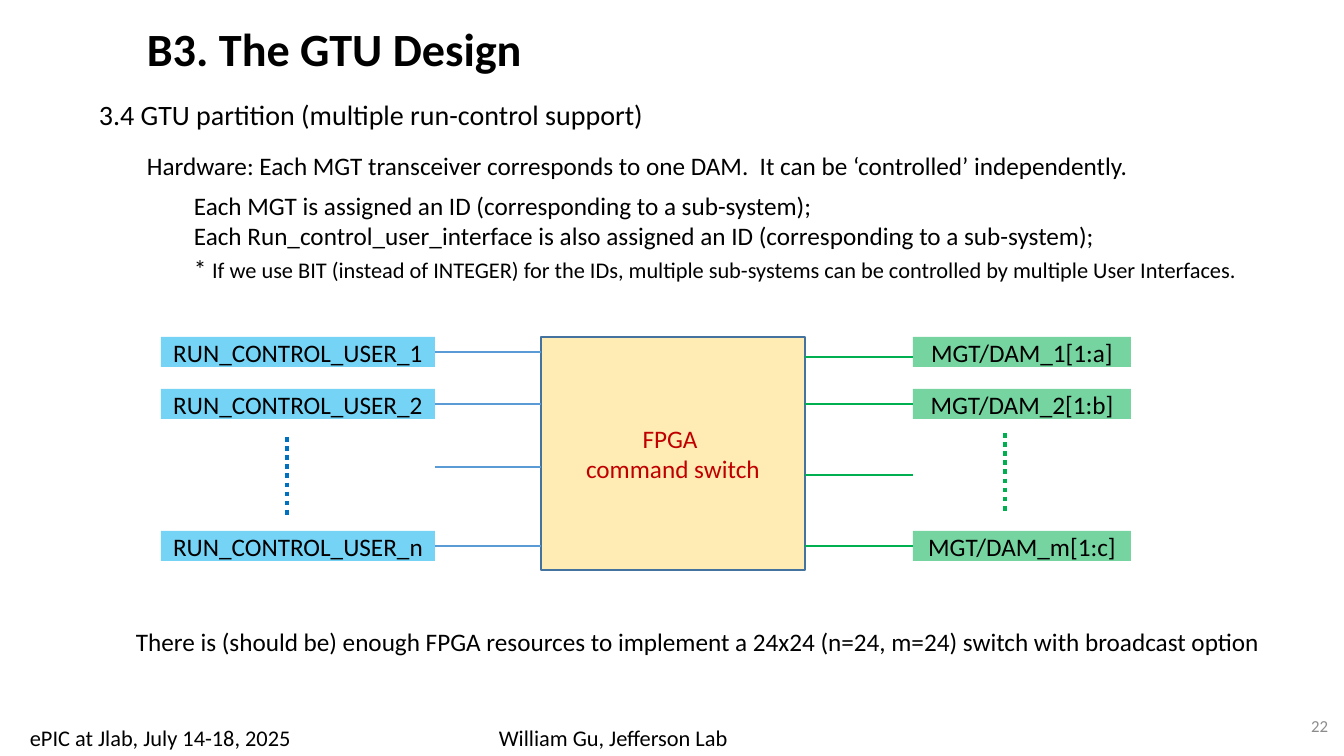
from lxml.etree import SubElement
from pptx import Presentation
from pptx.dml.color import RGBColor
from pptx.enum.dml import MSO_LINE
from pptx.enum.shapes import MSO_CONNECTOR, MSO_SHAPE
from pptx.enum.text import MSO_ANCHOR, PP_ALIGN
from pptx.oxml.ns import qn
from pptx.util import Pt

# Texts: (left, top, width, height), paragraphs of (wording, style) runs, layout
TEXTS = [
    ((20, 719, 284, 37), [[("ePIC at Jlab, July 14-18, 2025", "small")]], {}),
    ((489, 719, 252, 37), [[("William Gu, Jefferson Lab", "small")]], {}),
    ((137, 31, 407, 53), [[("B3. The GTU Design", "title")]], {"line_spacing": 0.7}),
    ((89, 93, 616, 44),
     [[("3.4 GTU partition (multiple run-control support)", "heading")]], {}),
    ((1036, 706, 302, 40), [[("22", "number")]], {"alignment": PP_ALIGN.RIGHT}),
    ((137, 145, 1008, 40),
     [[("Hardware: Each MGT transceiver corresponds to one DAM.  "
        "It can be ‘controlled’ independently.", "body")]], {}),
    ((184, 185, 931, 72),
     [[("Each MGT is assigned an ID (corresponding to a sub-system);", "body")],
      [("Each Run_control_user_interface is also assigned an ID "
        "(corresponding to a sub-system);", "body")]], {}),
    ((184, 248, 1083, 40),
     [[("* ", "body"),
       ("If we use BIT (instead of INTEGER) for the IDs, multiple sub-systems "
        "can be controlled by multiple User Interfaces.", "small")]], {}),
    ((126, 621, 1158, 40),
     [[("There is (should be) enough FPGA resources to implement a 24x24 "
        "(n=24, m=24) switch with broadcast option", "body")]], {}),
]
SWITCH_LINES = ["FPGA ", "command switch"]
USERS = ["RUN_CONTROL_USER_1", "RUN_CONTROL_USER_2", "RUN_CONTROL_USER_n"]
MODULES = ["MGT/DAM_1[1:a]", "MGT/DAM_2[1:b]", "MGT/DAM_m[1:c]"]

THEME = {
    "font": "Calibri",
    "styles": {
        "title": {"size": 33, "color": "000000", "bold": True},
        "heading": {"size": 20, "color": "000000"},
        "body": {"size": 18, "color": "000000"},
        "small": {"size": 16, "color": "000000"},
        "number": {"size": 12, "color": "8C8C8C"},
        "switch": {"size": 18, "color": "C00000"},
    },
    "user": {"fill": "00B0F0", "alpha": 54, "line": "5B9BD5", "dots": "0070C0"},
    "module": {"fill": "00B050", "alpha": 54, "line": "00B050", "dots": "00B050"},
    "switch": {"fill": "FFC000", "alpha": 29, "line": "43739E"},
}

# Diagram geometry in px
ROW_TOPS = [337, 389, 531]
ROW_HEIGHT = 30
USER_LEFT, USER_WIDTH = 161, 274
SWITCH = (541, 337, 264, 233)
MODULE_LEFT, MODULE_WIDTH = 913, 218
SWITCH_RIGHT = SWITCH[0] + SWITCH[2]
USER_RIGHT = USER_LEFT + USER_WIDTH
FIRST_MODULE_LINE_Y = 357
DOTS_LENGTH = 79

EMU_PER_PX = 914400 / 100.8


def px(*lengths):
    return [round(length * EMU_PER_PX) for length in lengths]


def write(frame, paragraphs, layout):
    for index, runs in enumerate(paragraphs):
        paragraph = frame.paragraphs[0] if index == 0 else frame.add_paragraph()
        for name, value in layout.items():
            setattr(paragraph, name, value)
        for wording, style_name in runs:
            style = THEME["styles"][style_name]
            run = paragraph.add_run()
            run.text = wording
            formats = {"name": THEME["font"], "size": Pt(style["size"]),
                       "bold": style.get("bold", False)}
            for name, value in formats.items():
                setattr(run.font, name, value)
            run.font.color.rgb = RGBColor.from_string(style["color"])


def add_text(slide, place, paragraphs, layout):
    frame = slide.shapes.add_textbox(*px(*place)).text_frame
    frame.word_wrap = False
    if "alignment" in layout:
        frame.word_wrap = True
        frame.vertical_anchor = MSO_ANCHOR.MIDDLE
    write(frame, paragraphs, layout)


def add_block(slide, place, paragraphs, look, outlined=False):
    """Add a translucent rectangle with centred text."""
    block = slide.shapes.add_shape(MSO_SHAPE.RECTANGLE, *px(*place))
    block.shadow.inherit = False
    block.fill.solid()
    block.fill.fore_color.rgb = RGBColor.from_string(look["fill"])
    tint = block.fill._xPr.find(qn("a:solidFill"))[0]
    SubElement(tint, qn("a:alpha"), val=str(look["alpha"] * 1000))
    if outlined:
        block.line.color.rgb = RGBColor.from_string(look["line"])
        block.line.width = Pt(1)
    else:
        block.line.fill.background()
    block.text_frame.word_wrap = False
    block.text_frame.vertical_anchor = MSO_ANCHOR.MIDDLE
    write(block.text_frame, paragraphs, {"alignment": PP_ALIGN.CENTER})
    return block


def add_line(slide, start, end, color, width=1, dash=None):
    line = slide.shapes.add_connector(MSO_CONNECTOR.STRAIGHT, *px(*start, *end))
    SubElement(line._element.spPr, qn("a:effectLst"))
    line.line.color.rgb = RGBColor.from_string(color)
    line.line.width = Pt(width)
    if dash:
        line.line.dash_style = dash
    return line


def add_dots(slide, x, top, color):
    add_line(slide, (x, top), (x, top + DOTS_LENGTH), color, 3.25,
             MSO_LINE.ROUND_DOT)


def add_diagram(slide):
    user, module = THEME["user"], THEME["module"]
    add_block(slide, SWITCH, [[(words, "switch")] for words in SWITCH_LINES],
              THEME["switch"], outlined=True)

    for row, (top, user_name, module_name) in enumerate(zip(ROW_TOPS, USERS, MODULES)):
        middle = top + ROW_HEIGHT // 2
        user_block = add_block(slide, (USER_LEFT, top, USER_WIDTH, ROW_HEIGHT),
                               [[(user_name, "body")]], user)
        user_line = add_line(slide, (USER_RIGHT, middle), (SWITCH[0], middle),
                             user["line"])
        user_line.begin_connect(user_block, 3)

        module_block = add_block(slide, (MODULE_LEFT, top, MODULE_WIDTH, ROW_HEIGHT),
                                 [[(module_name, "body")]], module)
        line_y = FIRST_MODULE_LINE_Y if row == 0 else middle
        module_line = add_line(slide, (SWITCH_RIGHT, line_y), (MODULE_LEFT, line_y),
                               module["line"])
        if line_y == middle:
            module_line.end_connect(module_block, 1)

    add_line(slide, (USER_RIGHT, 467), (SWITCH[0], 467), user["line"], 2)
    add_line(slide, (SWITCH_RIGHT, 475), (MODULE_LEFT, 475), module["line"], 2)
    add_dots(slide, 287, 437, user["dots"])
    add_dots(slide, 1005, 433, module["dots"])


def main():
    deck = Presentation()
    deck.slide_width, deck.slide_height = px(1344, 756)
    slide = deck.slides.add_slide(deck.slide_layouts[6])
    for place, paragraphs, layout in TEXTS:
        add_text(slide, place, paragraphs, layout)
    add_diagram(slide)
    deck.save("out.pptx")


if __name__ == "__main__":
    main()
